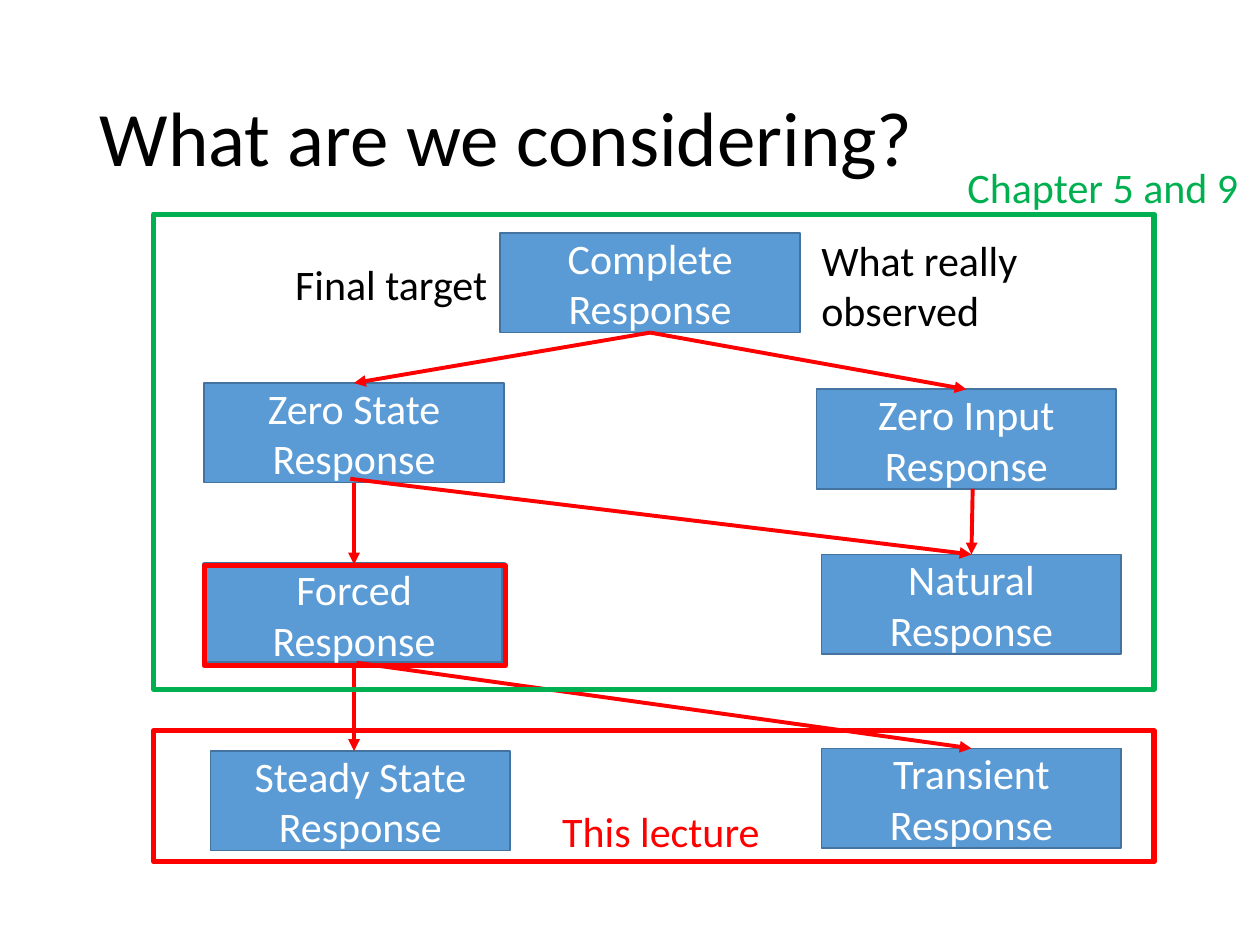
"""Build the slide that maps how circuit responses break down."""
from lxml.etree import SubElement
from pptx import Presentation
from pptx.dml.color import RGBColor
from pptx.enum.shapes import MSO_CONNECTOR, MSO_SHAPE
from pptx.enum.text import MSO_ANCHOR, MSO_AUTO_SIZE, PP_ALIGN
from pptx.oxml.ns import qn
from pptx.util import Inches, Pt

COLORS = {"black": "000000", "white": "FFFFFF", "blue": "5B9BD5",
          "edge": "43739E", "red": "FF0000", "green": "00B050"}
COLUMNS, ROWS = 100, 75
BOX_SIZE = (23.8, 7.9)
TOP, BOTTOM = 0, 2


class ResponseMap:
    """Hold the style and the slide, and place elements on a 100 by 75 grid."""

    def __init__(self, prs):
        """Add a title-only slide to the presentation."""
        self.column = prs.slide_width / COLUMNS
        self.row = prs.slide_height / ROWS
        self.slide = prs.slides.add_slide(prs.slide_layouts[5])
        self.shapes = self.slide.shapes

    def spot(self, column, row):
        """Turn a grid position or size into slide lengths."""
        return round(column * self.column), round(row * self.row)

    def set_text(self, shape, text, color, align, size=24, anchor=MSO_ANCHOR.TOP):
        """Fill a shape with one formatted paragraph and return it."""
        tf = shape.text_frame
        frame_format = {"word_wrap": True, "vertical_anchor": anchor,
                        "auto_size": MSO_AUTO_SIZE.NONE}
        for name, value in frame_format.items():
            setattr(tf, name, value)
        p = tf.paragraphs[0]
        p.alignment = align
        r = p.add_run()
        r.text = text
        for name, value in {"name": "Calibri", "size": Pt(size)}.items():
            setattr(r.font, name, value)
        r.font.color.rgb = RGBColor.from_string(COLORS[color])
        return p

    def title(self, text, at, size):
        """Move and format the title placeholder."""
        sp = self.shapes.title
        bounds = self.spot(*at) + self.spot(*size)
        for name, value in zip(("left", "top", "width", "height"), bounds):
            setattr(sp, name, value)
        p = self.set_text(sp, text, "black", PP_ALIGN.LEFT, 44, MSO_ANCHOR.MIDDLE)
        p.line_spacing = 0.9

    def frame(self, at, size, line, width=3, fill=None):
        """Draw an outlined rectangle, hollow unless a fill is given."""
        sp = self.shapes.add_shape(MSO_SHAPE.RECTANGLE,
                                   *self.spot(*at), *self.spot(*size))
        sp.shadow.inherit = False
        if fill:
            sp.fill.solid()
            sp.fill.fore_color.rgb = RGBColor.from_string(COLORS[fill])
        else:
            sp.fill.background()
        sp.line.color.rgb = RGBColor.from_string(COLORS[line])
        sp.line.width = Pt(width)
        return sp

    def box(self, text, at, width=1):
        """Draw a blue response box."""
        sp = self.frame(at, BOX_SIZE, "edge", width, "blue")
        self.set_text(sp, text, "white", PP_ALIGN.CENTER, anchor=MSO_ANCHOR.MIDDLE)
        return sp

    def label(self, text, at, size, color="black", align=PP_ALIGN.LEFT):
        """Place a free text label."""
        sp = self.shapes.add_textbox(*self.spot(*at), *self.spot(*size))
        self.set_text(sp, text, color, align)

    def arrow(self, start, end):
        """Draw a red arrow between boxes (joined) or grid points (free)."""
        begin_at, end_at = (self.spot(*tip) if isinstance(tip, tuple) else (0, 0)
                            for tip in (start, end))
        line = self.shapes.add_connector(MSO_CONNECTOR.STRAIGHT, *begin_at, *end_at)
        if not isinstance(start, tuple):
            line.begin_connect(start, BOTTOM)
        if not isinstance(end, tuple):
            line.end_connect(end, TOP)
        line.line.color.rgb = RGBColor.from_string(COLORS["red"])
        line.line.width = Pt(2.25)
        properties = line.element.spPr
        SubElement(properties.find(qn("a:ln")), qn("a:tailEnd"), type="triangle")
        SubElement(properties, qn("a:effectLst"))


def main():
    """Compose and save the slide."""
    prs = Presentation()
    prs.slide_width, prs.slide_height = Inches(10), Inches(7.5)
    s = ResponseMap(prs)
    s.title("What are we considering?", (6.9, 4), (86.2, 14.5))

    complete = s.box("Complete Response", (39.7, 18.5))
    natural = s.box("Natural Response", (65.2, 44))
    forced = s.box("Forced Response", (16.2, 44.8), 3)
    zero_state = s.box("Zero State Response", (16.2, 30.4))
    zero_input = s.box("Zero Input Response", (64.8, 30.9))
    transient = s.box("Transient Response", (65.2, 59.4))
    s.box("Steady State Response", (16.7, 59.6))

    for start, end in ((complete, zero_state), (complete, zero_input),
                       (zero_state, forced), ((77.2, 38.8), natural),
                       ((27.8, 38), natural), ((28.3, 52.6), transient),
                       (forced, (28.1, 59.6))):
        s.arrow(start, end)

    s.frame((12.2, 58), (79.4, 10.4), "red")
    s.frame((12.2, 17), (79.4, 37.7), "green")
    s.label("Final target", (22.3, 20), (17.5, 5), align=PP_ALIGN.CENTER)
    s.label("What really observed", (64.2, 18.1), (23.8, 9.1))
    s.label("Chapter 5 and 9", (75.8, 12.3), (25.7, 5), "green")
    s.frame((16.2, 44.9), (23.9, 7.9), "red")
    s.label("This lecture", (39.4, 63.4), (26.1, 5), "red", PP_ALIGN.CENTER)
    prs.save("out.pptx")


if __name__ == "__main__":
    main()
